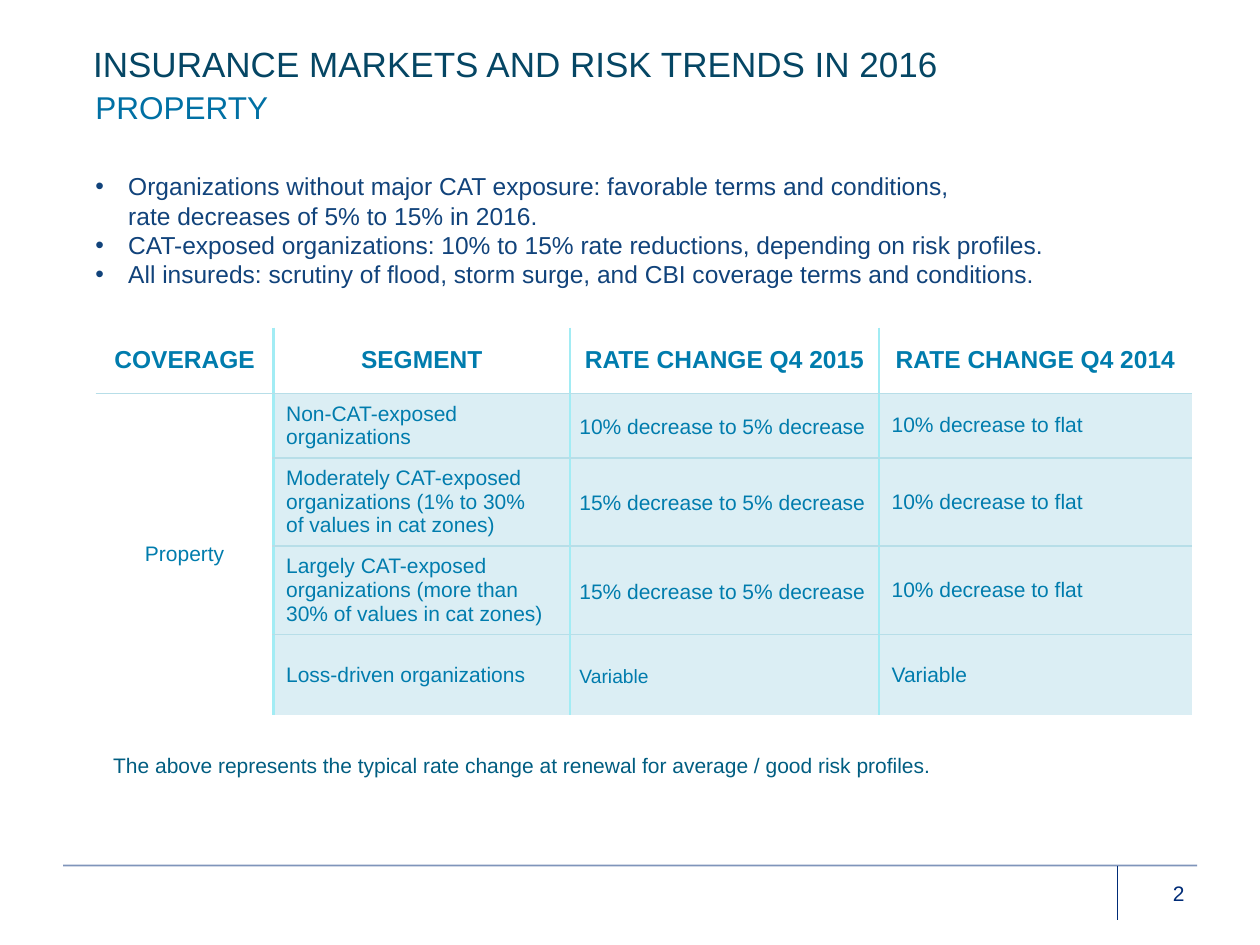
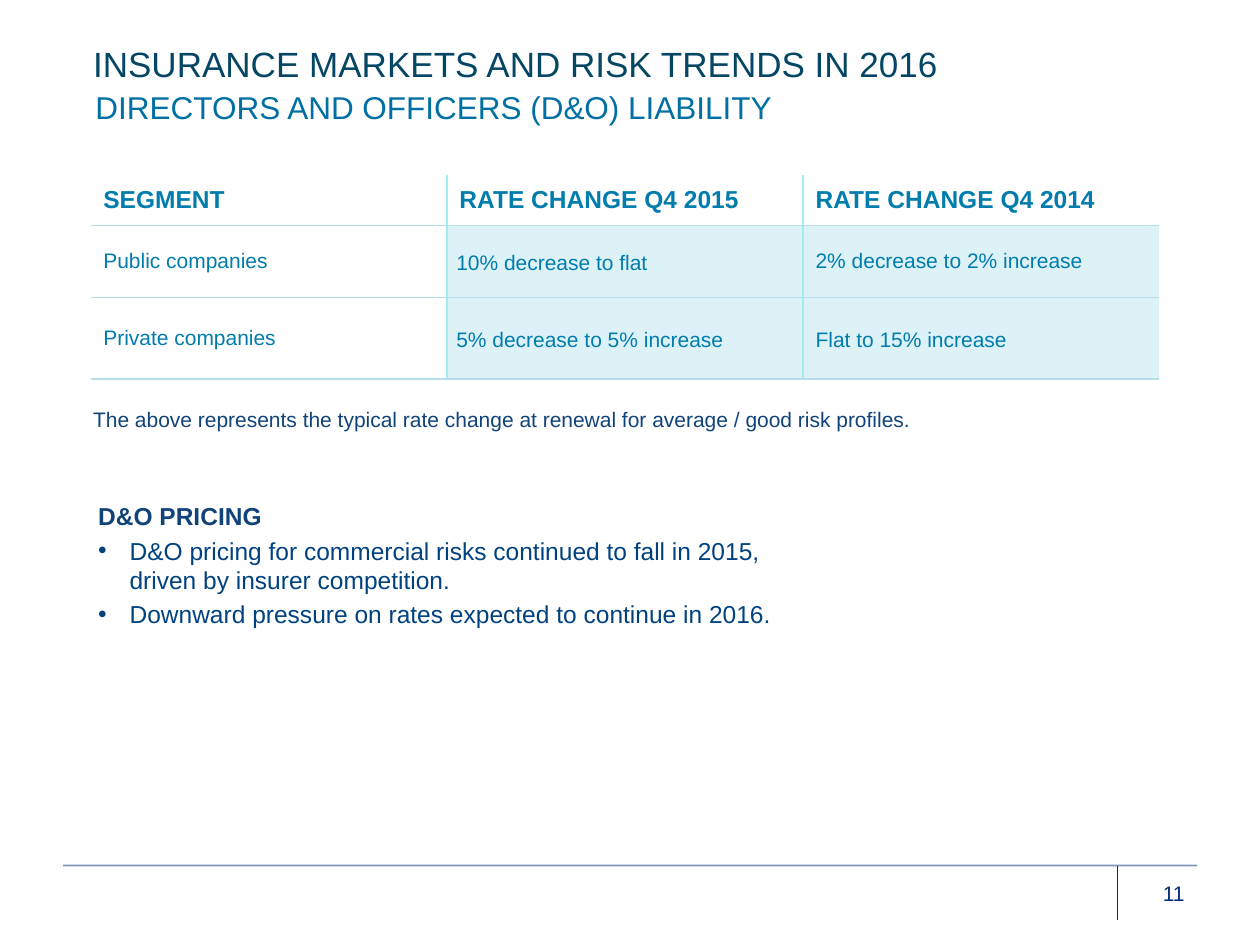
import copy

import pptx
import pptx.dml.color
import pptx.enum.shapes
import pptx.enum.text
import pptx.oxml
import pptx.oxml.ns
import pptx.util

W, H = 10, 7.5
COLS, ROWS = 100, 75  # layout grid of the slide
FONT = "Arial"
C = {
    "title": "054664", "subtitle": "0070A4", "footer": "002C77",
    "body": "11437B", "bullet": "004280", "note": "005D81",
    "table": "007CAD", "cell": "DBEEF4", "tint": "86D3E4",
    "rule": "B7DEE8", "divider": "A2ECF4",
}
TITLE = "INSURANCE MARKETS AND RISK TRENDS IN 2016"
NOTE = ("The above represents the typical rate change at renewal "
        "for average / good risk profiles.")
RATES = ["RATE CHANGE Q4 2015", "RATE CHANGE Q4 2014"]
ALIGN = {"l": pptx.enum.text.PP_ALIGN.LEFT,
         "c": pptx.enum.text.PP_ALIGN.CENTER,
         "r": pptx.enum.text.PP_ALIGN.RIGHT}
NO_STYLE = "{2D5ABB26-0587-4C30-8999-92F81FD0307C}"
qn = pptx.oxml.ns.qn


def gx(cols):
    return pptx.util.Inches(cols * W / COLS)


def gy(rows):
    return pptx.util.Inches(rows * H / ROWS)


def rgb(name):
    return pptx.dml.color.RGBColor.from_string(C[name])


def add_xml(parent, tag, index=None, **attrs):
    el = parent.makeelement(qn(tag), {k: str(v) for k, v in attrs.items()})
    parent.insert(len(parent) if index is None else index, el)
    return el


def set_alpha(fill_parent, percent):
    for clr in fill_parent.iter(qn("a:srgbClr")):
        add_xml(clr, "a:alpha", val=percent * 1000)


def write(tf, text, size=12, color="body", bold=False, align="l",
          indent=None, before=0, after=0, spacing=None):
    """Add one formatted paragraph to a text frame."""
    p = tf.paragraphs[0]
    if p.runs:
        p = tf.add_paragraph()
        p.space_before = pptx.util.Pt(before)
    p.text = text
    p.alignment = ALIGN[align]
    if after:
        p.space_after = pptx.util.Pt(after)
    if spacing:
        p.line_spacing = spacing
    if indent:
        pPr = p._p.get_or_add_pPr()
        pPr.set("marL", str(gx(indent)))
        pPr.set("indent", str(-gx(indent)))
        add_xml(pPr, "a:buFont", typeface=FONT)
        add_xml(pPr, "a:buChar", char="•")
    for r in p.runs:
        r.font.name, r.font.size, r.font.bold = FONT, pptx.util.Pt(size), bold
        r.font.color.rgb = rgb(color)
    for br in p._p.findall(qn("a:br")):
        br.insert(0, copy.deepcopy(p.runs[0]._r.get_or_add_rPr()))


def text_box(s, box, *paragraphs):
    """Place a wrapping box holding (text, format) paragraphs."""
    x, y, w, h = box
    tf = s.shapes.add_textbox(gx(x), gy(y), gx(w), gy(h)).text_frame
    tf.word_wrap = True
    for text, fmt in paragraphs:
        write(tf, text, **fmt)


def line(s, x1, y1, x2, y2, alpha=None):
    cn = s.shapes.add_connector(pptx.enum.shapes.MSO_CONNECTOR.STRAIGHT,
                                gx(x1), gy(y1), gx(x2), gy(y2))
    cn.line.color.rgb = rgb("footer")
    cn.line.width = pptx.util.Pt(1)
    spPr = cn._element.spPr
    if alpha:
        set_alpha(spPr, alpha)
    add_xml(spPr, "a:effectLst")


def heading(s, box, subtitle):
    x, y, w, h = box
    text_box(s, (x, y, w, h * 0.7), (TITLE, dict(size=20, color="title")))
    text_box(s, (x + 0.2, y + h * 0.46, w * 0.88, h * 0.54),
             (subtitle, dict(size=18, color="subtitle")))


def footer(s, box, number):
    x, y, w, h = box
    split = x + w * 0.93
    line(s, x, y, x + w, y, alpha=50)
    line(s, split, y, split, y + h)
    text_box(s, (split + 1, y + 0.7, x + w - split - 1, h - 0.7),
             (str(number), dict(color="footer", align="r")))


def border(cell, side, color, width):
    tcPr = cell._tc.get_or_add_tcPr()
    index = len([el for el in tcPr if el.tag.startswith(qn("a:ln"))])
    ln = add_xml(tcPr, f"a:ln{side}", index, w=pptx.util.Pt(width))
    add_xml(add_xml(ln, "a:solidFill"), "a:srgbClr", val=C[color])


def rate_table(s, box, widths, heights, rows, fill, alpha=None,
               head_align="l", after=0, merge_first=False, closed=False):
    """Rate table: header row, tinted values, rules between cells."""
    x, y, w, h = box
    last_row, last_col = len(heights) - 1, len(widths) - 1
    t = s.shapes.add_table(len(heights), len(widths),
                           gx(x), gy(y), gx(w), gy(h)).table
    t._tbl.tblPr.find(qn("a:tableStyleId")).text = NO_STYLE
    t.first_row = t.horz_banding = False
    for col, width in zip(t.columns, widths):
        col.width = gx(w * width / sum(widths))
    for row, height in zip(t.rows, heights):
        row.height = gy(h * height / sum(heights))
    if merge_first:
        t.cell(1, 0).merge(t.cell(last_row, 0))
    for i, row in enumerate(rows):
        for j, content in enumerate(row):
            cell = t.cell(i, j)
            text, extra = content if isinstance(content, tuple) else (content, {})
            fmt = dict(color="table")
            cell.vertical_anchor = pptx.enum.text.MSO_ANCHOR.MIDDLE
            side, edge = 1, 0.5
            if i == 0:
                fmt.update(size=14, bold=True, align=head_align)
            elif j == last_col - 1:  # first rate column is set tighter
                fmt.update(spacing=1.15, after=after)
                side, edge = 0.75, 0
            cell.margin_left = cell.margin_right = gx(side)
            cell.margin_top = cell.margin_bottom = gy(edge)
            if text:
                write(cell.text_frame, text, **{**fmt, **extra})
            if i and j:
                cell.fill.solid()
                cell.fill.fore_color.rgb = rgb(fill)
                if alpha:
                    set_alpha(cell._tc.tcPr, alpha)
            else:
                cell.fill.background()
            # Borders in schema order: left, right, top, bottom
            joined = merge_first and j == 0
            if j:
                border(cell, "L", "divider", 1.5)
            if j < last_col:
                border(cell, "R", "divider", 1.5)
            if i == 1 or i and not joined:
                border(cell, "T", "rule", 1)
            if i == 0 or (not joined and i < last_row) or (closed and i == last_row):
                border(cell, "B", "rule", 1)


def property_slide(s):
    bullet = dict(size=14, indent=2.6)
    text_box(
        s, (6.6, 13.1, 89.4, 10.4),
        ("Organizations without major CAT exposure: favorable terms and "
         "conditions,\nrate decreases of 5% to 15% in 2016.", bullet),
        ("CAT-exposed organizations: 10% to 15% rate reductions, "
         "depending on risk profiles.", bullet),
        ("All insureds: scrutiny of flood, storm surge, and CBI coverage "
         "terms and conditions.", bullet))
    flat = "10% decrease to flat"
    rows = [
        ["COVERAGE", "SEGMENT", *RATES],
        [("Property", dict(align="c")), "Non-CAT-exposed organizations",
         "10% decrease to 5% decrease", flat],
        ["", "Moderately CAT-exposed organizations (1% to 30%\n"
         "of values in cat zones)", "15% decrease to 5% decrease", flat],
        ["", "Largely CAT-exposed organizations (more than 30% of values "
         "in cat zones)", "15% decrease to 5% decrease", flat],
        ["", "Loss-driven organizations", ("Variable", dict(size=11)), "Variable"],
    ]
    rate_table(s, (7.6, 26, 87, 29.6), [14.1, 23.5, 24.5, 24.8],
               [5.2, 5.1, 6.4, 6.4, 6.4], rows, "cell",
               head_align="c", after=10, merge_first=True)
    text_box(s, (8, 59.2, 83.2, 2.8), (NOTE, dict(color="note")))


def liability_slide(s):
    rows = [
        ["SEGMENT", *RATES],
        ["Public companies", "10% decrease to flat", "2% decrease to 2% increase"],
        ["Private companies", "5% decrease to 5% increase",
         ("Flat to 15% increase", dict(spacing=1.15))],
    ]
    rate_table(s, (7.2, 13.9, 84.8, 16.2), [1, 1, 1], [4, 5.7, 6.5],
               rows, "tint", alpha=28, closed=True)
    text_box(s, (6.4, 31.8, 83.2, 3), (NOTE, {}))
    bullet = dict(size=14, color="bullet", indent=2.5, before=2.8)
    text_box(
        s, (6.8, 39.3, 78.2, 24.2),
        ("D&O PRICING", dict(size=14, bold=True)),
        ("D&O pricing for commercial risks continued to fall in 2015,\n"
         "driven by insurer competition.", bullet),
        ("Downward pressure on rates expected to continue in 2016.", bullet))


def main():
    prs = pptx.Presentation()
    prs.slide_width, prs.slide_height = pptx.util.Inches(W), pptx.util.Inches(H)
    for subtitle, number, fill_body in (
            ("PROPERTY", 2, property_slide),
            ("DIRECTORS AND OFFICERS (D&O) LIABILITY", 11, liability_slide)):
        s = prs.slides.add_slide(prs.slide_layouts[6])
        footer(s, (5, 68.7, 90, 4.3), number)
        heading(s, (6.4, 2.9, 87.5, 7.8), subtitle)
        fill_body(s)
    prs.save("out.pptx")


if __name__ == "__main__":
    main()
